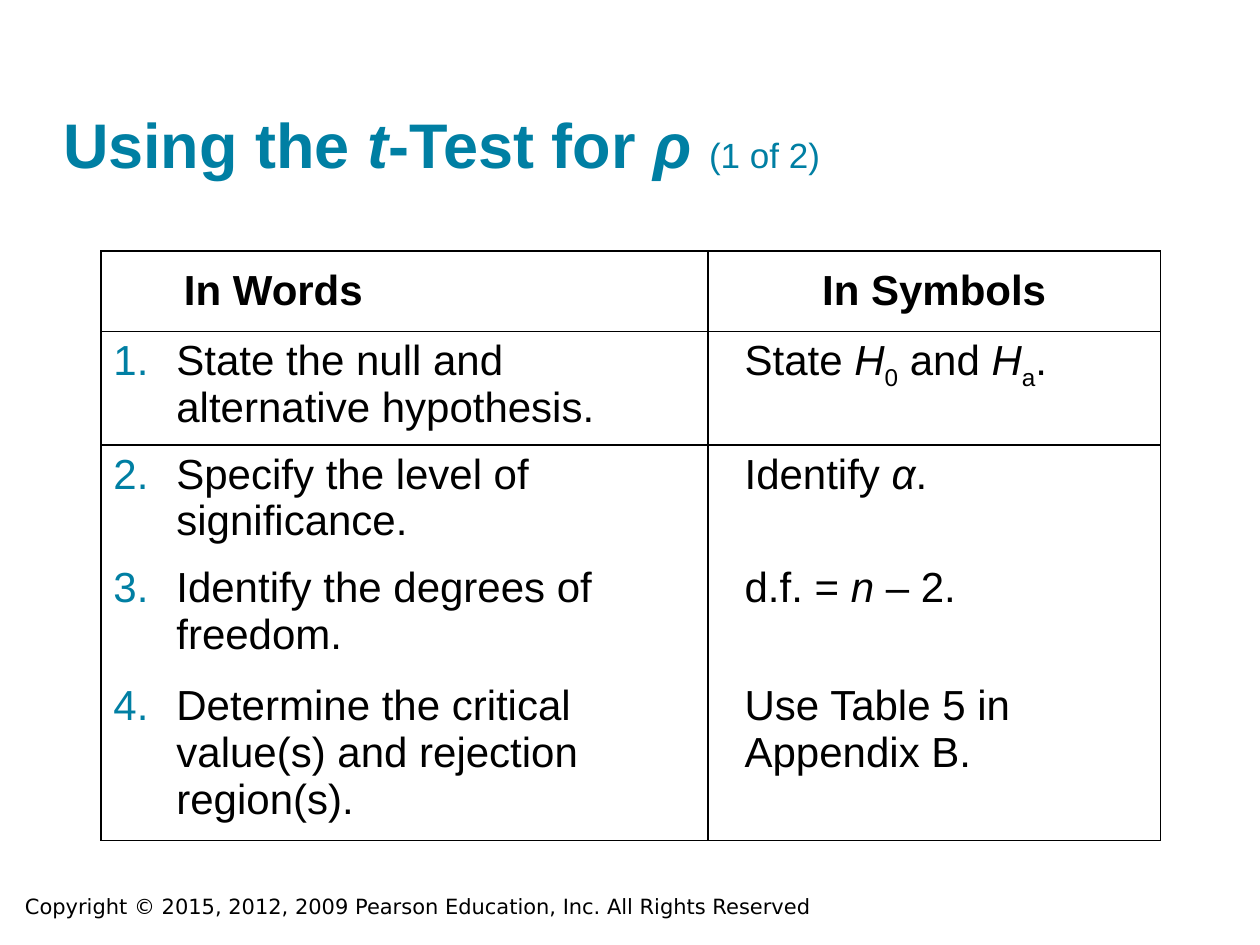
from dataclasses import dataclass

from lxml.etree import SubElement
from pptx import Presentation
from pptx.dml.color import RGBColor
from pptx.enum.text import MSO_ANCHOR, MSO_AUTO_SIZE, PP_ALIGN
from pptx.oxml.ns import qn
from pptx.util import Inches, Pt


@dataclass(frozen=True)
class Theme:
    """Colours, fonts and type sizes of the slide."""
    accent: str = "007FA3"
    ink: str = "000000"
    paper: str = "FFFFFF"
    font: str = "Arial"
    footer_font: str = "DejaVu Sans"
    title_size: int = 36
    counter_size: int = 20
    body_size: int = 24
    footer_size: int = 12
    rule_width: int = 1


def apply_format(target, values):
    """Set each attribute of target from a dict."""
    for name, value in values.items():
        setattr(target, name, value)


class SlideBuilder:
    """Holds the theme and the current slide."""

    def __init__(self, presentation, theme):
        """Add a title-only slide."""
        self.theme = theme
        self.slide = presentation.slides.add_slide(presentation.slide_layouts[5])

    def add_runs(self, paragraph, runs, color, **base):
        """Add (text, format) runs; a subscript entry lowers the run."""
        for text, changes in runs:
            values = {"name": self.theme.font, **base, **changes}
            subscript = values.pop("subscript", False)
            values["size"] = Pt(values["size"])
            run = paragraph.add_run()
            run.text = text
            apply_format(run.font, values)
            run.font.color.rgb = RGBColor.from_string(color)
            if subscript:
                run.font._element.set("baseline", "-25000")

    def title(self, box, runs):
        """Place and fill the title placeholder."""
        shape = self.slide.shapes.title
        apply_format(shape, dict(zip(("left", "top", "width", "height"), map(Inches, box))))
        apply_format(shape.text_frame, {
            "margin_left": 0, "margin_right": 0, "margin_top": 0, "margin_bottom": 0,
            "vertical_anchor": MSO_ANCHOR.BOTTOM, "word_wrap": True,
            "auto_size": MSO_AUTO_SIZE.NONE})
        paragraph = shape.text_frame.paragraphs[0]
        paragraph.alignment = PP_ALIGN.LEFT
        self.add_runs(paragraph, runs, self.theme.accent, size=self.theme.title_size, bold=True)

    def footer(self, box, text):
        """Add the copyright line."""
        frame = self.slide.shapes.add_textbox(*map(Inches, box)).text_frame
        frame.word_wrap = True
        self.add_runs(frame.paragraphs[0], [(text, {})], self.theme.ink,
                      name=self.theme.footer_font, size=self.theme.footer_size)

    def table(self, left, top, widths, heights, ruled_edges):
        """Add a table ruled at every column and at the given row edges."""
        frame = self.slide.shapes.add_table(
            len(heights), len(widths), Inches(left), Inches(top),
            Inches(sum(widths)), Inches(sum(heights)))
        table = frame.table
        apply_format(table, {"first_row": False, "horz_banding": False})
        for column, width in zip(table.columns, widths):
            column.width = Inches(width)
        for index, (row, height) in enumerate(zip(table.rows, heights)):
            row.height = Inches(height)
            for cell in row.cells:
                self.borders(cell, index in ruled_edges, index + 1 in ruled_edges)
                cell.fill.solid()
                cell.fill.fore_color.rgb = RGBColor.from_string(self.theme.paper)
        return table

    def borders(self, cell, top, bottom):
        """Rule both sides of a cell, and its top and bottom where asked."""
        properties = cell._tc.get_or_add_tcPr()
        for side, ruled in (("L", True), ("R", True), ("T", top), ("B", bottom)):
            line = SubElement(properties, qn(f"a:ln{side}"), w=str(Pt(self.theme.rule_width)))
            fill = SubElement(line, qn("a:solidFill" if ruled else "a:noFill"))
            if ruled:
                SubElement(fill, qn("a:srgbClr"), val=self.theme.ink)

    def cell(self, cell, runs, indent=0, number=None, bold=False,
             alignment=PP_ALIGN.LEFT, anchor=MSO_ANCHOR.TOP):
        """Fill a cell, with a hanging number if one is given."""
        cell.vertical_anchor = anchor
        paragraph = cell.text_frame.paragraphs[0]
        paragraph.alignment = alignment
        properties = paragraph._p.get_or_add_pPr()
        properties.set("marL", str(Inches(indent)))
        if number:
            properties.set("indent", str(-Inches(indent)))
            color = SubElement(properties, qn("a:buClr"))
            SubElement(color, qn("a:srgbClr"), val=self.theme.accent)
            SubElement(properties, qn("a:buFont"), typeface=self.theme.font)
            SubElement(properties, qn("a:buAutoNum"), type="arabicPeriod", startAt=str(number))
        self.add_runs(paragraph, runs, self.theme.ink, size=self.theme.body_size, bold=bold)


def main():
    """Build the slide and save it."""
    presentation = Presentation()
    apply_format(presentation, {"slide_width": Inches(10), "slide_height": Inches(7.5)})
    theme = Theme()
    builder = SlideBuilder(presentation, theme)
    italic = {"italic": True}
    subscript = {"subscript": True}

    builder.footer((0.1, 7.04, 7.83, 0.3),
                   "Copyright © 2015, 2012, 2009 Pearson Education, Inc. All Rights Reserved")
    builder.title((0.5, 0.24, 9, 1.2), [
        ("Using the ", {}), ("t", italic), ("-Test for ", {}), ("ρ ", italic),
        ("(1 of 2)", {"size": theme.counter_size, "bold": False})])

    steps = [
        ("State the null and alternative hypothesis.",
         [("State ", {}), ("H", italic), ("0", subscript), (" and ", {}),
          ("H", italic), ("a", subscript), (".", {})]),
        ("Specify the level of significance.",
         [("Identify ", {}), ("α", italic), (".", {})]),
        ("Identify the degrees of freedom.",
         [("d.f. = ", {}), ("n", italic), (" – 2.", {})]),
        ("Determine the critical value(s) and rejection region(s).",
         [("Use Table 5 in Appendix B.", {})]),
    ]
    table = builder.table(0.8, 1.99, (4.82, 3.59), (0.64, 0.9, 0.85, 0.94, 1.22),
                          ruled_edges={0, 1, 2, 5})
    header = {"bold": True, "anchor": MSO_ANCHOR.MIDDLE}
    builder.cell(table.cell(0, 0), [("In Words", {})], indent=0.56, **header)
    builder.cell(table.cell(0, 1), [("In Symbols", {})], alignment=PP_ALIGN.CENTER, **header)
    for number, (words, symbols) in enumerate(steps, start=1):
        builder.cell(table.cell(number, 0), [(words, {})], indent=0.5, number=number)
        builder.cell(table.cell(number, 1), symbols, indent=0.19)

    presentation.save("out.pptx")


if __name__ == "__main__":
    main()
